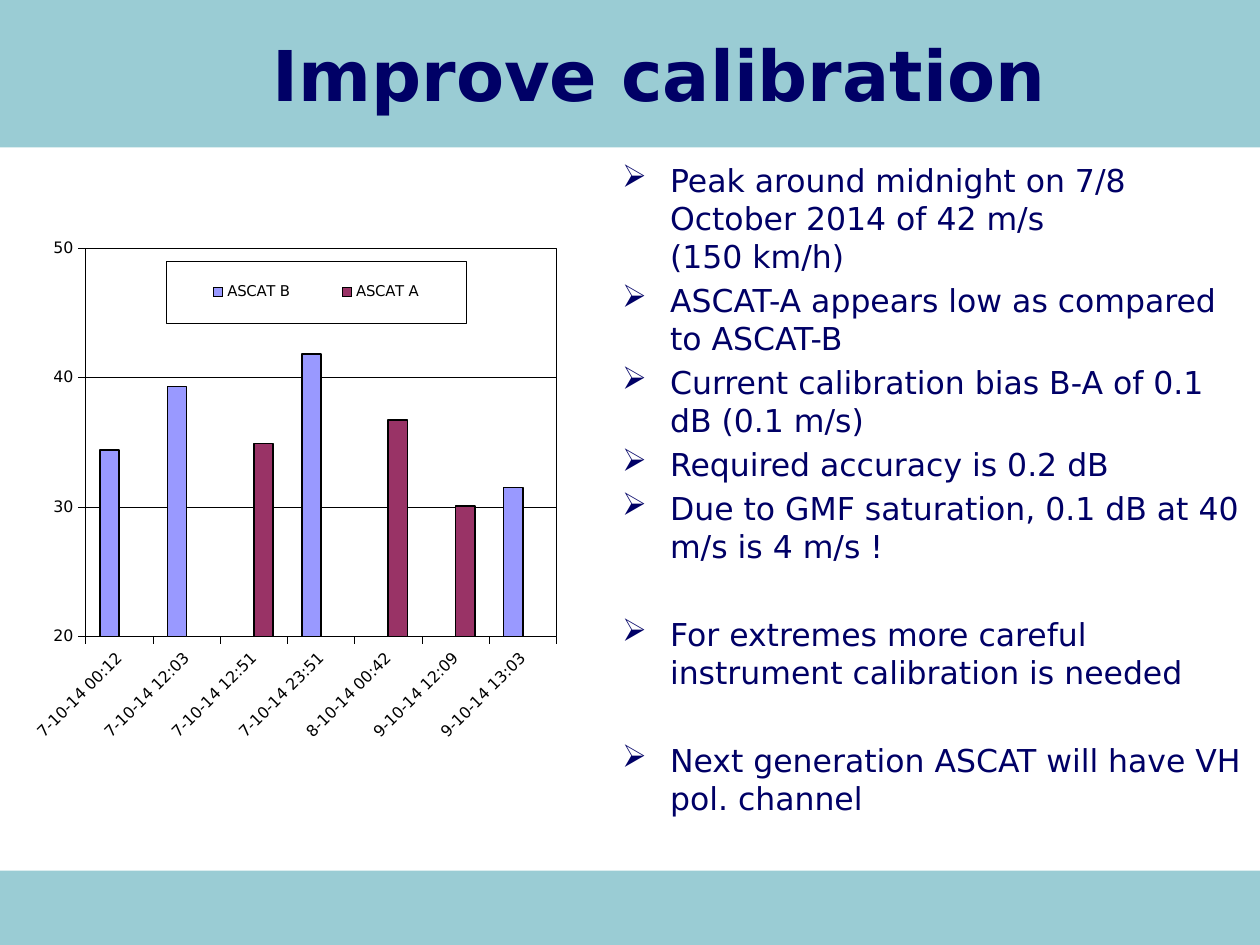
from lxml import etree
from pptx import Presentation
from pptx.chart.data import CategoryChartData
from pptx.dml.color import RGBColor
from pptx.enum.chart import XL_CHART_TYPE, XL_LEGEND_POSITION, XL_TICK_MARK
from pptx.enum.shapes import MSO_SHAPE
from pptx.enum.text import MSO_ANCHOR, PP_ALIGN
from pptx.oxml import parse_xml
from pptx.oxml.ns import nsdecls, qn
from pptx.util import Inches, Pt

FONT = "DejaVu Sans"
COLORS = {"band": "9ACCD4", "text": "000066", "black": "000000", "white": "FFFFFF"}
TITLE = "Improve calibration"
BANDS = [(0, 1.17), (6.91, 0.59)]
CATEGORIES = ["7-10-14 00:12", "7-10-14 12:03", "7-10-14 12:51", "7-10-14 23:51",
              "8-10-14 00:42", "9-10-14 12:09", "9-10-14 13:03"]
SERIES = [
    ("ASCAT B", "9999FF", [34.4, 39.3, None, 41.8, None, None, 31.5]),
    ("ASCAT A", "993366", [None, None, 34.9, None, 36.7, 30.1, None]),
]
PLOT_LAYOUT = {"x": 0.19, "y": 0.12, "w": 0.47, "h": 0.57}
LEGEND_LAYOUT = {"x": 0.27, "y": 0.14, "w": 0.3, "h": 0.09}
NORMAL_GAP, WIDE_GAP = 3.6, 28.8
BULLETS = [
    (0, ["Peak around midnight on 7/8 October 2014 of 42 m/s", "(150 km/h)"]),
    (NORMAL_GAP, ["ASCAT-A appears low as compared to ASCAT-B"]),
    (NORMAL_GAP, ["Current calibration bias B-A of 0.1 dB (0.1 m/s)"]),
    (NORMAL_GAP, ["Required accuracy is 0.2 dB"]),
    (NORMAL_GAP, ["Due to GMF saturation, 0.1 dB at 40 m/s is 4 m/s !"]),
    (WIDE_GAP, ["For extremes more careful instrument calibration is needed"]),
    (WIDE_GAP, ["Next generation ASCAT will have VH pol. channel"]),
]


def color(name):
    return RGBColor.from_string(COLORS[name])


def style_font(font, size, name="black", bold=False):
    font.name, font.size, font.bold = FONT, Pt(size), bold
    font.color.rgb = color(name)


def style_line(line, width=0.25):
    line.color.rgb = color("black")
    line.width = Pt(width)


def add_text_box(page, left, top, width, height):
    box = page.shapes.add_textbox(Inches(left), Inches(top), Inches(width), Inches(height))
    box.text_frame.word_wrap = True
    return box.text_frame


def manual_layout(places, inner=False):
    target = '<c:layoutTarget val="inner"/>' if inner else ""
    modes = '<c:xMode val="edge"/><c:yMode val="edge"/>'
    values = "".join(f'<c:{key} val="{value}"/>' for key, value in places.items())
    return parse_xml(f'<c:layout {nsdecls("c")}><c:manualLayout>{target}{modes}{values}'
                     '</c:manualLayout></c:layout>')


def outline_xml(fill):
    return parse_xml(
        f'<c:spPr {nsdecls("c", "a")}><a:solidFill><a:srgbClr val="{fill}"/></a:solidFill>'
        f'<a:ln w="{Pt(0.25)}"><a:solidFill><a:srgbClr val="{COLORS["black"]}"/></a:solidFill>'
        '</a:ln></c:spPr>')


def add_bands(page):
    for top, height in BANDS:
        band = page.shapes.add_shape(MSO_SHAPE.RECTANGLE, 0, Inches(top), Inches(10), Inches(height))
        band.shadow.inherit = False
        band.fill.solid()
        band.fill.fore_color.rgb = color("band")
        band.line.fill.background()


def add_title(page):
    frame = add_text_box(page, 0.46, 0, 9.54, 1.16)
    frame.vertical_anchor = MSO_ANCHOR.MIDDLE
    para = frame.paragraphs[0]
    para.alignment = PP_ALIGN.CENTER
    span = para.add_run()
    span.text = TITLE
    style_font(span.font, 40, "text", True)


def add_wind_chart(page):
    data = CategoryChartData()
    data.categories = CATEGORIES
    for name, _, values in SERIES:
        data.add_series(name, values)
    chart = page.shapes.add_chart(XL_CHART_TYPE.COLUMN_CLUSTERED, Inches(-0.83), Inches(1.32),
                                  Inches(7.95), Inches(5.41), data).chart
    style_font(chart.font, 9)
    chart.has_title = False
    plot = chart.plots[0]
    plot.gap_width, plot.overlap, plot.vary_by_categories = 150, 0, False
    for series, (_, fill, _) in zip(plot.series, SERIES):
        series.format.fill.solid()
        series.format.fill.fore_color.rgb = RGBColor.from_string(fill)
        style_line(series.format.line, 1)

    for axis in (chart.category_axis, chart.value_axis):
        axis.major_tick_mark = XL_TICK_MARK.OUTSIDE
        axis.minor_tick_mark = XL_TICK_MARK.NONE
        style_line(axis.format.line)
        style_font(axis.tick_labels.font, 9)
    chart.category_axis._element.find(qn("c:txPr")).find(qn("a:bodyPr")).set("rot", "-2700000")
    values = chart.value_axis
    values.minimum_scale, values.maximum_scale, values.major_unit = 20, 50, 10
    values.tick_labels.number_format = "0"
    values.tick_labels.number_format_is_linked = False
    values.has_major_gridlines = True
    style_line(values.major_gridlines.format.line)

    chart.has_legend = True
    legend = chart.legend
    legend.position = XL_LEGEND_POSITION.RIGHT
    legend.include_in_layout = False
    style_font(legend.font, 8.5)
    legend_xml = legend._element
    for old in legend_xml.findall(qn("c:layout")):
        legend_xml.remove(old)
    legend_xml.find(qn("c:legendPos")).addnext(manual_layout(LEGEND_LAYOUT))
    legend_xml.find(qn("c:txPr")).addprevious(outline_xml(COLORS["white"]))

    area = chart._chartSpace.chart.plotArea
    for old in area.findall(qn("c:layout")):
        area.remove(old)
    area.insert(0, manual_layout(PLOT_LAYOUT, inner=True))
    area.append(outline_xml(COLORS["white"]))


def add_bullets(page):
    frame = add_text_box(page, 4.84, 1.23, 5.16, 5.59)
    for index, (gap, lines) in enumerate(BULLETS):
        para = frame.add_paragraph() if index else frame.paragraphs[0]
        properties = para._p.get_or_add_pPr()
        properties.set("marL", str(Inches(0.38)))
        properties.set("indent", str(-Inches(0.38)))
        etree.SubElement(properties, qn("a:buChar")).set("char", "➢")
        para.space_before = Pt(gap)
        for number, line in enumerate(lines):
            if number:
                para.add_line_break()
            span = para.add_run()
            span.text = line
            style_font(span.font, 18, "text")


def main():
    deck = Presentation()
    deck.slide_width, deck.slide_height = Inches(10), Inches(7.5)
    page = deck.slides.add_slide(deck.slide_layouts[6])
    add_bands(page)
    add_title(page)
    add_wind_chart(page)
    add_bullets(page)
    deck.save("out.pptx")


if __name__ == "__main__":
    main()
